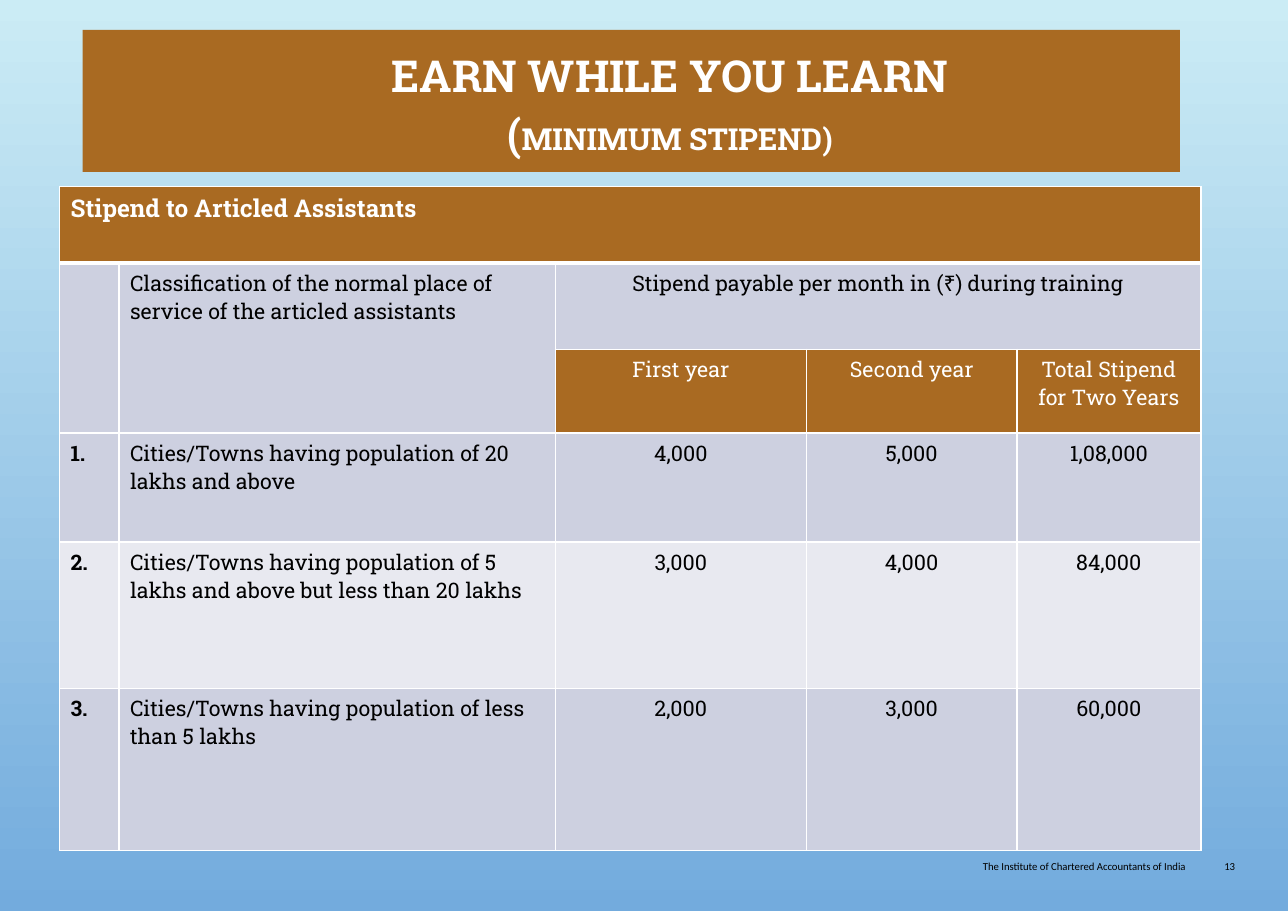
from lxml.etree import SubElement
from pptx import Presentation
from pptx.dml.color import RGBColor
from pptx.enum.shapes import MSO_SHAPE
from pptx.enum.text import MSO_ANCHOR, PP_ALIGN
from pptx.oxml.ns import qn
from pptx.util import Inches, Pt

BROWN, LAVENDER, PALE, WHITE, BLACK = "A96A22", "CDD0E0", "E8E9F0", "FFFFFF", "000000"
LEFT, CENTER, RIGHT = PP_ALIGN.LEFT, PP_ALIGN.CENTER, PP_ALIGN.RIGHT

color = RGBColor.from_string


def write(paragraph, text, size=14, font="Roboto Slab", ink=BLACK, bold=False, align=LEFT):
    """Append a formatted run to the paragraph and align it."""
    paragraph.alignment = align
    run = paragraph.add_run()
    run.text = text
    run.font.size = Pt(size)
    run.font.name = font
    run.font.bold = bold
    run.font.color.rgb = color(ink)


def rule_cell(cell, **widths):
    """Draw white borders; widths are points by side, in the order L, R, T, B."""
    properties = cell._tc.get_or_add_tcPr()
    for side, width in widths.items():
        line = SubElement(properties, qn(f"a:ln{side}"), w=str(Pt(width)))
        fill = SubElement(line, qn("a:solidFill"))
        SubElement(fill, qn("a:srgbClr"), val=WHITE)


deck = Presentation()
deck.slide_width, deck.slide_height = Inches(11.69), Inches(8.27)
slide = deck.slides.add_slide(deck.slide_layouts[6])

sky = slide.background.fill
sky.gradient()
sky.gradient_angle = 270
for stop, shade in zip(sky.gradient_stops, ("CBECF5", "73ABDD")):
    stop.color.rgb = color(shade)

# Footer
for text, left, width in (
    ("The Institute of Chartered Accountants of India", 6.07, 4.69),
    ("13", 10.91, 0.3),
):
    footer = slide.shapes.add_textbox(
        Inches(left), Inches(7.81), Inches(width), Inches(0.24)
    ).text_frame
    footer.word_wrap = True
    footer.margin_left = footer.margin_right = footer.margin_top = footer.margin_bottom = 0
    write(footer.paragraphs[0], text, size=7, font="Calibri", align=RIGHT)

# Title banner
banner = slide.shapes.add_shape(
    MSO_SHAPE.RECTANGLE, Inches(0.75), Inches(0.27), Inches(9.96), Inches(1.29)
)
banner.shadow.inherit = False
banner.fill.solid()
banner.fill.fore_color.rgb = color(BROWN)
banner.line.fill.background()
title = banner.text_frame
title.word_wrap = True
title.vertical_anchor = MSO_ANCHOR.MIDDLE
title.margin_left = Inches(0.8)
headline, subtitle = title.paragraphs[0], title.add_paragraph()
for paragraph, text, size in (
    (headline, "EARN WHILE YOU LEARN", 28.8),
    (subtitle, "(", 27.9),
    (subtitle, "MINIMUM STIPEND)", 19.8),
):
    paragraph.line_spacing = Pt(38)
    write(paragraph, text, size=size, ink=WHITE, bold=True, align=CENTER)

# Stipend table
column_widths = (0.54, 3.96, 2.28, 1.91, 1.67)
row_heights = (0.7, 0.78, 0.76, 0.99, 1.33, 1.47)
stipends = (
    ("Stipend to Articled Assistants", "", "", "", ""),
    ("", "Classification of the normal place of service of the articled assistants",
     "Stipend payable per month in (₹) during training", "", ""),
    ("", "", "First year", "Second year", "Total Stipend for Two Years"),
    ("1.", "Cities/Towns having population of 20 lakhs and above", "4,000", "5,000", "1,08,000"),
    ("2.", "Cities/Towns having population of 5 lakhs and above but less than 20 lakhs",
     "3,000", "4,000", "84,000"),
    ("3.", "Cities/Towns having population of less than 5 lakhs", "2,000", "3,000", "60,000"),
)
table = slide.shapes.add_table(
    len(row_heights), len(column_widths), Inches(0.54), Inches(1.69),
    Inches(sum(column_widths)), Inches(sum(row_heights))
).table
for column, width in zip(table.columns, column_widths):
    column.width = Inches(width)
for row, height in zip(table.rows, row_heights):
    row.height = Inches(height)

for r, entries in enumerate(stipends):
    for c, text in enumerate(entries):
        cell = table.cell(r, c)
        rule_cell(cell, L=1, R=1, T=3 if r == 1 else 1, B=3 if r == 0 else 1)
        heading = r == 0 or (r == 2 and c >= 2)
        cell.fill.solid()
        cell.fill.fore_color.rgb = color(BROWN if heading else PALE if r == 4 else LAVENDER)
        if text:
            write(
                cell.text_frame.paragraphs[0], text,
                size=16 if r == 0 else 14,
                ink=WHITE if heading else BLACK,
                bold=c == 0,
                align=CENTER if c >= 2 else LEFT,
            )

for first, last in (((0, 0), (0, 4)), ((1, 0), (2, 0)), ((1, 1), (2, 1)), ((1, 2), (1, 4))):
    table.cell(*first).merge(table.cell(*last))

deck.save("out.pptx")
